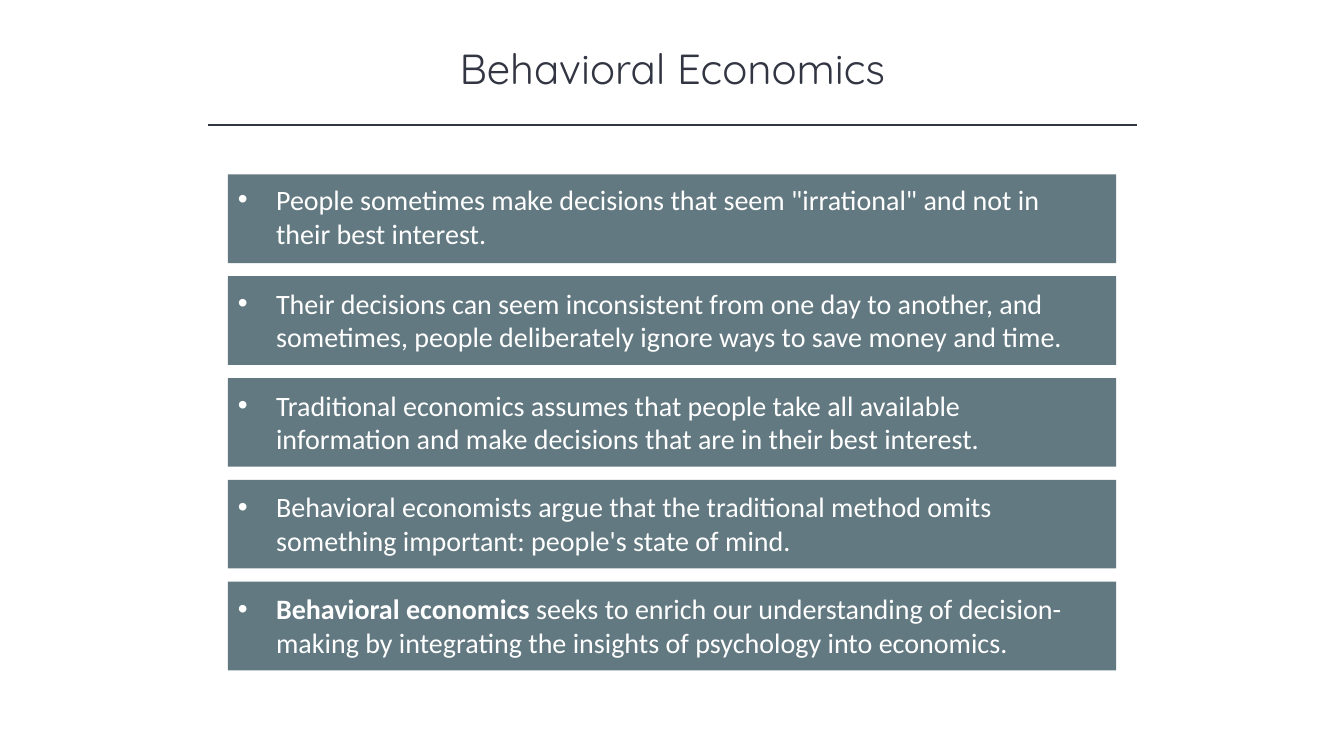
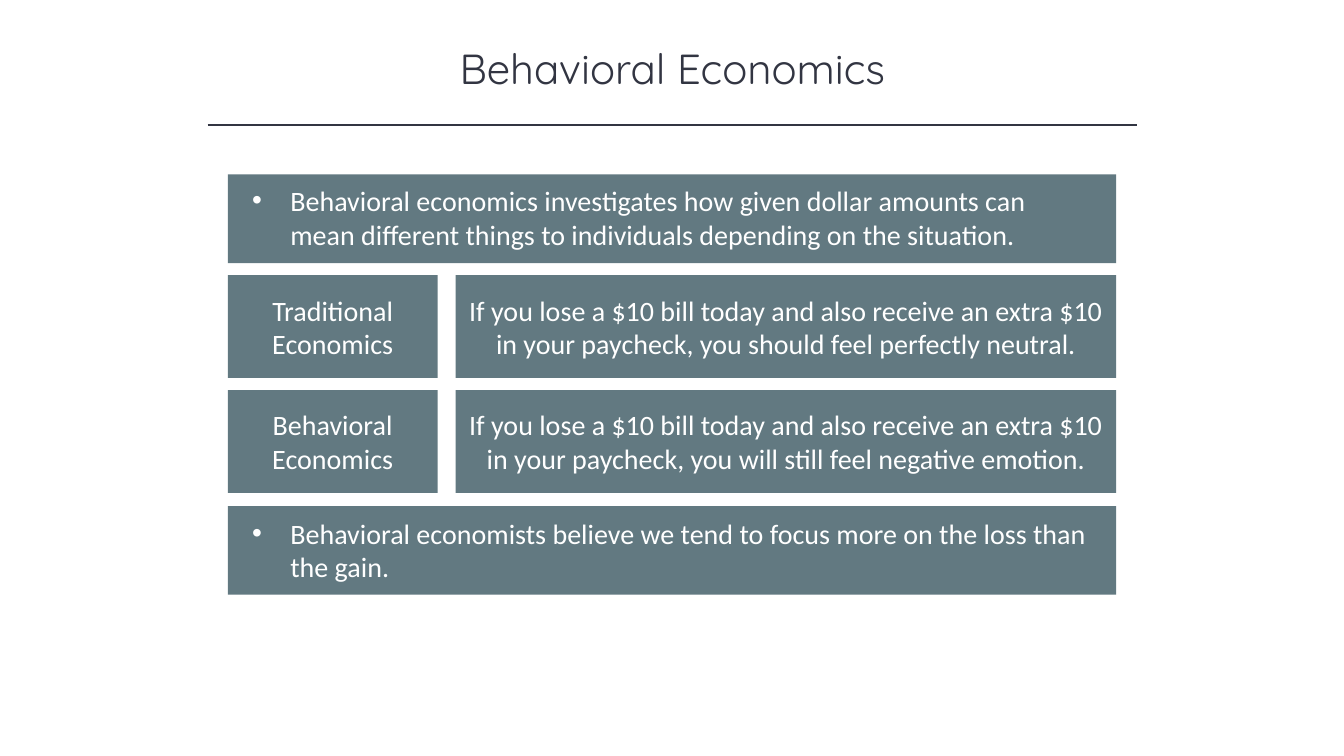
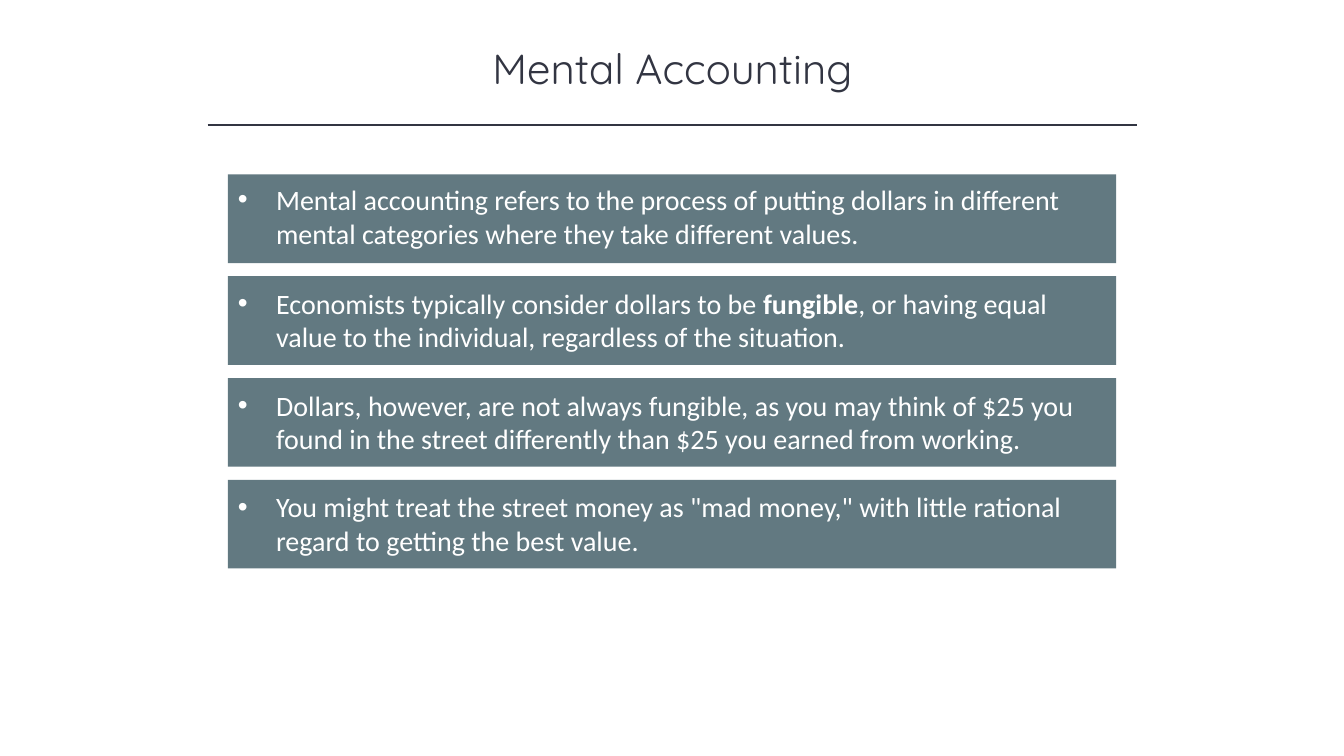
from lxml import etree
from pptx import Presentation
from pptx.dml.color import RGBColor
from pptx.enum.shapes import MSO_CONNECTOR, MSO_SHAPE
from pptx.enum.text import MSO_ANCHOR, PP_ALIGN
from pptx.oxml.ns import qn
from pptx.util import Pt

# Shared look; 100 px to the inch
PX = 9144
INK = RGBColor(0x32, 0x35, 0x42)
SLATE = RGBColor(0x62, 0x79, 0x81)
WHITE = RGBColor(0xFF, 0xFF, 0xFF)
TITLE_FONT, BODY_FONT = "Quicksand", "Calibri"
RECTANGLE = MSO_SHAPE.RECTANGLE
STRAIGHT = MSO_CONNECTOR.STRAIGHT
TOP, MIDDLE = MSO_ANCHOR.TOP, MSO_ANCHOR.MIDDLE
LEFT, CENTER = PP_ALIGN.LEFT, PP_ALIGN.CENTER

# Grid
BAND_LEFT, BAND_TOP, BAND_WIDTH, BAND_HEIGHT = 226, 173, 881, 88
BAND_STEP = 101
LABEL_WIDTH, LABEL_GAP = 208, 18
PAIR_TOP, PAIR_HEIGHT, PAIR_STEP = 273, 102, 114
LAST_BAND_TOP = 502
HANGING_INDENT = 38


def write(box, text, font=BODY_FONT, size=20, color=WHITE, align=CENTER,
          anchor=MIDDLE, insets=(10, 5, 10, 5), bullet=False):
    """Fill a box with one paragraph; *asterisks* mark bold words."""
    frame = box.text_frame
    frame.word_wrap = True
    frame.vertical_anchor = anchor
    (frame.margin_left, frame.margin_top,
     frame.margin_right, frame.margin_bottom) = [inset * PX for inset in insets]
    para = frame.paragraphs[0]
    para.alignment = align
    if bullet:
        properties = para._p.get_or_add_pPr()
        properties.set("marL", str(HANGING_INDENT * PX))
        properties.set("indent", str(-HANGING_INDENT * PX))
        etree.SubElement(properties, qn("a:buFont")).set("typeface", "Arial")
        etree.SubElement(properties, qn("a:buChar")).set("char", "•")
    for index, part in enumerate(text.split("*")):
        if part:
            span = para.add_run()
            span.text = part
            span.font.name = font
            span.font.size = Pt(size)
            span.font.color.rgb = color
            span.font.bold = index % 2 == 1


def add_band(page, text, left, top, width, height, **text_format):
    """Add a slate rectangle with its text."""
    band = page.shapes.add_shape(
        RECTANGLE, left * PX, top * PX, width * PX, height * PX)
    band.shadow.inherit = False
    band.fill.solid()
    band.fill.fore_color.rgb = SLATE
    band.line.fill.background()
    write(band, text, **text_format)


deck = Presentation()
deck.slide_width, deck.slide_height = 1333 * PX, 750 * PX

# Pages with title and rule
pages = []
for title in ("Behavioral Economics", "Behavioral Economics", "Mental Accounting"):
    page = deck.slides.add_slide(deck.slide_layouts[6])
    title_box = page.shapes.add_textbox(167 * PX, 37 * PX, 1000 * PX, 61 * PX)
    write(title_box, title, font=TITLE_FONT, size=30, color=INK, anchor=TOP)
    rule = page.shapes.add_connector(
        STRAIGHT, 206 * PX, 124 * PX, 1128 * PX, 124 * PX)
    rule.line.color.rgb = INK
    rule.line.width = Pt(1)
    etree.SubElement(rule._element.spPr, qn("a:effectLst"))
    pages.append(page)
intro_page, comparison_page, accounting_page = pages

# Pages made of stacked bullet bands
stacks = [
    (intro_page, [
        "People sometimes make decisions that seem \"irrational\" and not in their best interest.",
        "Their decisions can seem inconsistent from one day to another, and sometimes, people "
        "deliberately ignore ways to save money and time.",
        "Traditional economics assumes that people take all available information and make "
        "decisions that are in their best interest.",
        "Behavioral economists argue that the traditional method omits something important: "
        "people's state of mind.",
        "*Behavioral economics *seeks to enrich our understanding of decision-making by "
        "integrating the insights of psychology into economics.",
    ]),
    (accounting_page, [
        "Mental accounting refers to the process of putting dollars in different mental "
        "categories where they take different values.",
        "Economists typically consider dollars to be *fungible*, or having equal value to the "
        "individual, regardless of the situation.",
        "Dollars, however, are not always fungible, as you may think of $25 you found in the "
        "street differently than $25 you earned from working.",
        "You might treat the street money as \"mad money,\" with little rational regard to "
        "getting the best value.",
    ]),
]
for page, points in stacks:
    for row, point in enumerate(points):
        top_inset = 10 if row else 8
        add_band(page, point, BAND_LEFT, BAND_TOP + row * BAND_STEP,
                 BAND_WIDTH, BAND_HEIGHT, align=LEFT, anchor=TOP,
                 insets=(10, top_inset, 37, 5), bullet=True)

# Comparison page: opening and closing bands
framing_points = [
    (BAND_TOP, 9, "Behavioral economics investigates how given dollar amounts can mean "
     "different things to individuals depending on the situation."),
    (LAST_BAND_TOP, 10, "Behavioral economists believe we tend to focus more on the loss "
     "than the gain."),
]
for top, top_inset, point in framing_points:
    add_band(comparison_page, point, BAND_LEFT, top, BAND_WIDTH, BAND_HEIGHT,
             align=LEFT, anchor=TOP, insets=(24, top_inset, 23, 5), bullet=True)

# Comparison page: label and statement pairs
views = [("Traditional Economics", "should feel perfectly neutral."),
         ("Behavioral Economics", "will still feel negative emotion.")]
statement_left = BAND_LEFT + LABEL_WIDTH + LABEL_GAP
statement_width = BAND_WIDTH - LABEL_WIDTH - LABEL_GAP
for row, (label, outcome) in enumerate(views):
    top = PAIR_TOP + row * PAIR_STEP
    statement = ("If you lose a $10 bill today and also receive an extra $10 "
                 f"in your paycheck, you {outcome}")
    add_band(comparison_page, label, BAND_LEFT, top, LABEL_WIDTH, PAIR_HEIGHT)
    add_band(comparison_page, statement, statement_left, top,
             statement_width, PAIR_HEIGHT)

deck.save("out.pptx")
